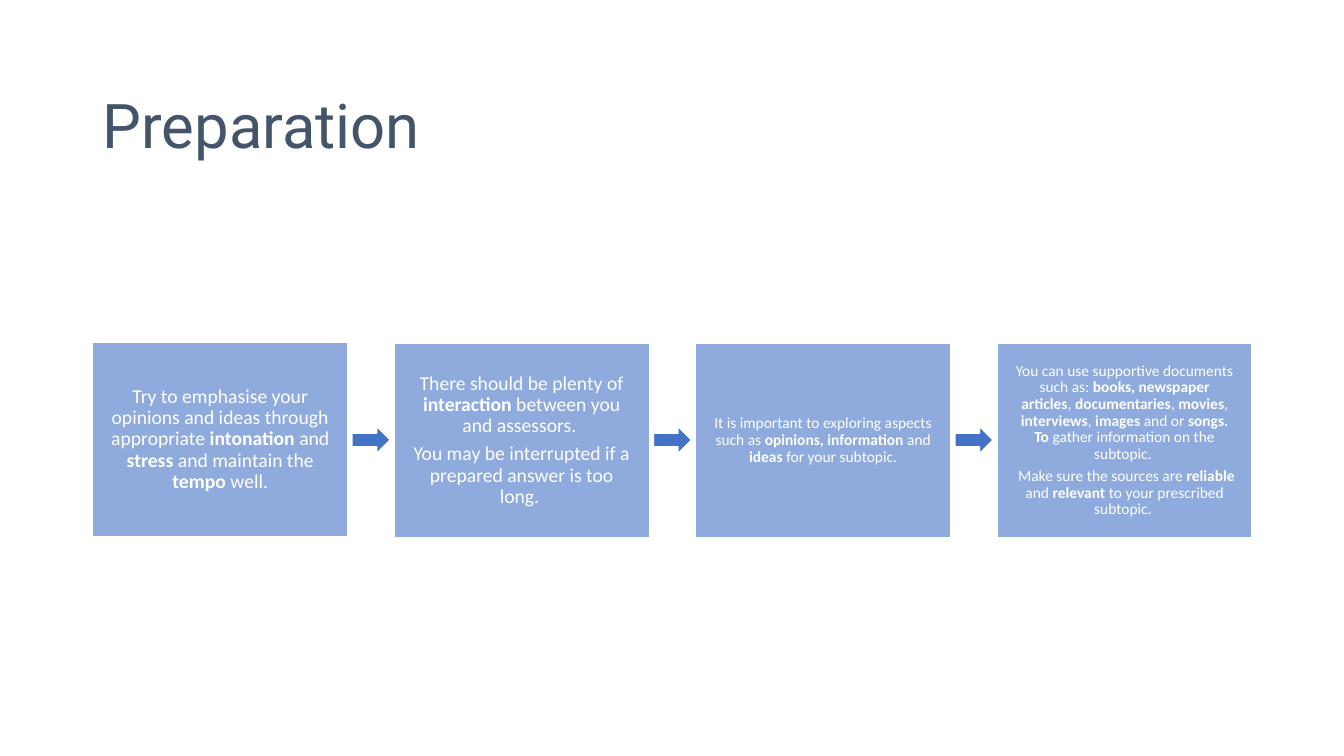
import pptx
import pptx.util
import pptx.dml.color
import pptx.enum.shapes
import pptx.enum.text

PX = 9144  # 100 px to the inch
COLORS = {"title": "44546A", "card": "8FAADC", "arrow": "4472C4", "white": "FFFFFF"}
SHAPE = pptx.enum.shapes.MSO_SHAPE
ALIGN = pptx.enum.text.PP_ALIGN

# Text size and paragraphs of each step; ** switches bold on and off
STEPS = [
    (14, ["Try to emphasise your opinions and ideas through appropriate "
          "**intonation** and **stress **and maintain the **tempo** well."]),
    (14, ["There should be plenty of **interaction** between you and assessors. ",
          "You may be interrupted if a prepared answer is too long. "]),
    (11, ["It is important to exploring aspects such as "
          "**opinions, information** and **ideas** for your subtopic."]),
    (11, ["You can use supportive documents such as: **books, newspaper articles**, "
          "**documentaries**, **movies**, **interviews**, **images** and or "
          "**songs. To** gather information on the subtopic. ",
          " Make sure the sources are **reliable** and **relevant** "
          "to your prescribed subtopic. "]),
]


def color(name):
    return pptx.dml.color.RGBColor.from_string(COLORS[name])


def write(shape, paras, size, font="Calibri", tint="white", align=ALIGN.CENTER,
          pad=(17, 17), after=0):
    """Fill a shape with paragraphs; pad is the side and the top inset."""
    frame = shape.text_frame
    frame.word_wrap = True
    frame.vertical_anchor = pptx.enum.text.MSO_ANCHOR.MIDDLE
    frame.margin_left = frame.margin_right = pad[0] * PX
    frame.margin_top = frame.margin_bottom = pad[1] * PX
    for i, text in enumerate(paras):
        para = frame.paragraphs[0] if i == 0 else frame.add_paragraph()
        para.alignment = align
        para.line_spacing = 0.9
        para.space_after = pptx.util.Pt(after)
        for j, part in enumerate(text.split("**")):
            run = para.add_run()
            run.text = part
            run.font.name = font
            run.font.size = pptx.util.Pt(size)
            run.font.bold = j % 2 == 1
            run.font.color.rgb = color(tint)


def block(slide, kind, box, fill):
    shape = slide.shapes.add_shape(kind, *(n * PX for n in box))
    shape.shadow.inherit = False
    shape.fill.solid()
    shape.fill.fore_color.rgb = color(fill)
    shape.line.color.rgb = color("white")
    shape.line.width = pptx.util.Pt(1)
    return shape


def title(slide, box):
    shape = slide.shapes.add_textbox(*(n * PX for n in box))
    write(shape, ["Preparation"], 44, font="Roboto", tint="title",
          align=ALIGN.LEFT, pad=(10, 5))


def flow(slide, box):
    """Equal cards across the box, with an arrow in each gap."""
    left, top, width, height = box
    wide, long, thick = 253, 38, 27
    pitch = (width - wide) // (len(STEPS) - 1)
    for i, (size, paras) in enumerate(STEPS):
        x = left + i * pitch
        if i:
            start = x - (pitch - wide + long) // 2
            block(slide, SHAPE.RIGHT_ARROW,
                  (start, top + (height - thick) // 2, long, thick), "arrow")
        # The first card sits a hair higher than the rest
        y = top if i else top - 1
        card = block(slide, SHAPE.RECTANGLE, (x, y, wide, height), "card")
        write(card, paras, size, after=round(size * 0.35, 1))


def main():
    deck = pptx.Presentation()
    deck.slide_width, deck.slide_height = 1333 * PX, 750 * PX
    slide = deck.slides.add_slide(deck.slide_layouts[6])
    title(slide, (92, 55, 1150, 145))
    flow(slide, (92, 341, 1150, 192))
    deck.save("out.pptx")


if __name__ == "__main__":
    main()
